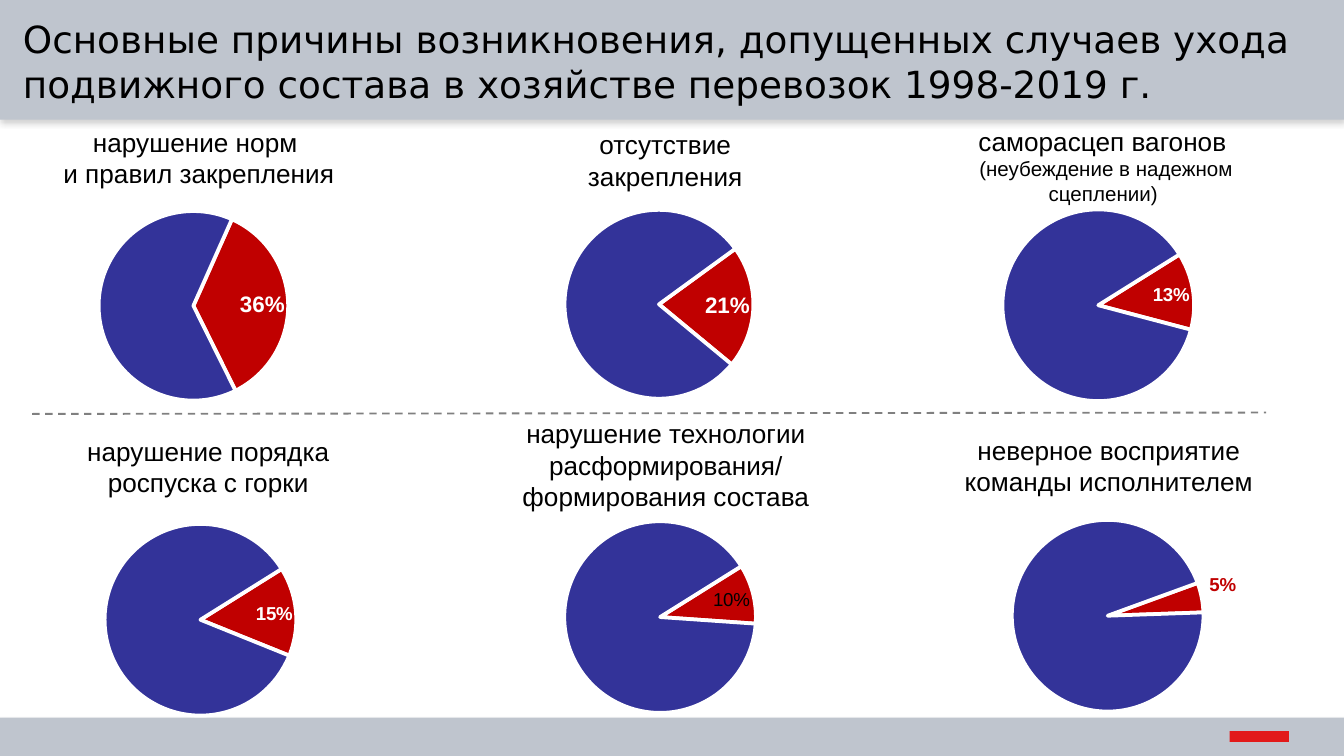
from dataclasses import dataclass

from lxml import etree
from pptx import Presentation
from pptx.chart.data import CategoryChartData
from pptx.dml.color import RGBColor
from pptx.enum import chart as charts, dml, shapes, text
from pptx.oxml import parse_xml
from pptx.oxml.ns import nsdecls, qn
from pptx.util import Inches, Pt

COLORS = {
    "band": "BFC5CE",
    "emblem": "E21A1A",
    "ink": "000000",
    "paper": "FFFFFF",
    "share": "C00000",
    "rest": "333399",
    "divider": "808080",
}
Box = tuple[float, float, float, float]
BEST_FIT = charts.XL_LABEL_POSITION.BEST_FIT
OUTSIDE = charts.XL_LABEL_POSITION.OUTSIDE_END
PLOT: Box = (0.135, 0.048, 0.717, 0.895)


@dataclass(frozen=True)
class Line:
    content: str
    size: int = 14
    new_paragraph: bool = False


@dataclass(frozen=True)
class Cause:
    lines: tuple[Line, ...]
    caption_box: Box
    chart_box: Box
    share: float
    start: int = 58
    plot: Box = PLOT
    label_size: int = 10
    label_color: str = "paper"
    label_bold: bool = True
    label_position: charts.XL_LABEL_POSITION = BEST_FIT


CAUSES = (
    Cause((Line("нарушение норм "), Line("и правил закрепления")),
          (0.28, 0.89, 2.4, 0.57), (0.39, 1.27, 2.25, 1.85), 0.36,
          start=24, plot=(0.153, 0.143, 0.627, 0.802), label_size=12),
    Cause((Line("отсутствие закрепления"),),
          (4.12, 0.91, 1.66, 0.57), (3.64, 1.33, 2.57, 1.91), 0.21,
          start=54, plot=(0.218, 0.121, 0.547, 0.737), label_size=12),
    Cause((Line("саморасцеп вагонов "),
           Line("(неубеждение в надежном сцеплении) ", 11)),
          (6.79, 0.88, 2.88, 0.71), (7.19, 1.43, 1.99, 1.7), 0.13),
    Cause((Line("нарушение порядка роспуска с горки"),),
          (0.25, 3.19, 2.6, 0.57), (0.51, 3.77, 1.99, 1.7), 0.15),
    Cause((Line("нарушение технологии расформирования/"),
           Line("формирования состава", new_paragraph=True)),
          (3.57, 3.06, 2.77, 0.81), (3.93, 3.75, 1.99, 1.7), 0.1,
          label_color="ink", label_bold=False),
    Cause((Line("неверное восприятие команды исполнителем"),),
          (6.89, 3.18, 2.72, 0.57), (7.26, 3.74, 1.99, 1.7), 0.05,
          start=70, label_color="share", label_position=OUTSIDE),
)


def rgb(name: str) -> RGBColor:
    return RGBColor.from_string(COLORS[name])


def inches(box: Box) -> list[Inches]:
    return [Inches(length) for length in box]


def format_font(font, *, size: int, name: str = "Arial",
                color: str = "ink", bold: bool = False) -> None:
    font.name, font.size, font.bold = name, Pt(size), bold
    font.color.rgb = rgb(color)


def add_span(para, content: str, **style) -> None:
    span = para.add_run()
    span.text = content
    format_font(span.font, **style)


def add_block(page, box: Box, color: str):
    block = page.shapes.add_shape(shapes.MSO_SHAPE.RECTANGLE, *inches(box))
    block.shadow.inherit = False
    block.fill.solid()
    block.fill.fore_color.rgb = rgb(color)
    block.line.fill.background()
    return block


def add_band(page, box: Box) -> None:
    """Add a full-width band with a soft shadow below it."""
    band = add_block(page, box, "band")
    effects = band._element.spPr.find(qn("a:effectLst"))
    effects.append(parse_xml(
        f'<a:outerShdw {nsdecls("a")} blurRad="{Pt(3.1)}" dist="{Pt(1.8)}" '
        'dir="5400000" rotWithShape="0"><a:srgbClr val="808080">'
        '<a:alpha val="35000"/></a:srgbClr></a:outerShdw>'))


def place_title(page, content: str) -> None:
    title = page.shapes.title
    title.left, title.top, title.width, title.height = inches(
        (0.07, 0.07, 9.93, 0.77))
    frame = title.text_frame
    frame.word_wrap = True
    frame.auto_size = text.MSO_AUTO_SIZE.NONE
    frame.vertical_anchor = text.MSO_ANCHOR.TOP
    para = frame.paragraphs[0]
    para.alignment = text.PP_ALIGN.LEFT
    add_span(para, content, size=20, name="DejaVu Sans")
    # Bring the title in front of the band
    page.shapes._spTree.append(title._element)


def add_caption(page, cause: Cause) -> None:
    box = page.shapes.add_textbox(*inches(cause.caption_box))
    box.text_frame.word_wrap = True
    para = box.text_frame.paragraphs[0]
    for index, line in enumerate(cause.lines):
        if line.new_paragraph:
            para = box.text_frame.add_paragraph()
        elif index:
            para.add_line_break()
        para.alignment = text.PP_ALIGN.CENTER
        add_span(para, line.content, size=line.size)


def set_plot_layout(chart, plot: Box) -> None:
    """Fix the inner plot area, given in fractions of the chart."""
    area = chart._chartSpace.find(".//" + qn("c:plotArea"))
    for old in area.findall(qn("c:layout")):
        area.remove(old)
    layout = etree.Element(qn("c:layout"))
    manual = etree.SubElement(layout, qn("c:manualLayout"))
    settings = [("layoutTarget", "inner"), ("xMode", "edge"), ("yMode", "edge"),
                *zip("xywh", plot)]
    for tag, value in settings:
        etree.SubElement(manual, qn(f"c:{tag}"), val=str(value))
    area.insert(0, layout)


def set_start_angle(chart, angle: int) -> None:
    pie = chart._chartSpace.find(".//" + qn("c:pieChart"))
    for old in pie.findall(qn("c:firstSliceAng")):
        pie.remove(old)
    etree.SubElement(pie, qn("c:firstSliceAng"), val=str(angle))


def add_pie(page, cause: Cause) -> None:
    data = CategoryChartData(number_format="0%")
    data.categories = ["1", "2"]
    data.add_series("Series 1", (cause.share, round(1 - cause.share, 2)))
    chart = page.shapes.add_chart(
        charts.XL_CHART_TYPE.PIE, *inches(cause.chart_box), data).chart
    chart.has_legend = chart.has_title = False
    format_font(chart.font, size=18)
    chart._chartSpace.find(qn("c:chart")).addnext(parse_xml(
        f'<c:spPr {nsdecls("c", "a")}><a:noFill/>'
        '<a:ln><a:noFill/></a:ln></c:spPr>'))
    set_plot_layout(chart, cause.plot)
    set_start_angle(chart, cause.start)
    chart.plots[0].vary_by_categories = True

    series = chart.plots[0].series[0]
    for index, color in enumerate(("share", "rest")):
        look = series.points[index].format
        look.fill.solid()
        look.fill.fore_color.rgb = rgb(color)
        look.line.color.rgb = rgb("paper")
        look.line.width = Pt(2)
    series.data_labels.show_value = False
    label = series.points[0].data_label
    format_font(label.font, size=cause.label_size, color=cause.label_color,
                bold=cause.label_bold)
    label.position = cause.label_position


def add_divider(page) -> None:
    divider = page.shapes.add_connector(
        shapes.MSO_CONNECTOR.STRAIGHT, *inches((0.24, 3.08, 9.42, 3.07)))
    divider.line.color.rgb = rgb("divider")
    divider.line.width = Pt(1)
    divider.line.dash_style = dml.MSO_LINE.DASH
    etree.SubElement(divider._element.spPr, qn("a:effectLst"))


def main() -> None:
    deck = Presentation()
    deck.slide_width, deck.slide_height = Inches(10), Inches(10 * 9 / 16)
    page = deck.slides.add_slide(deck.slide_layouts[5])
    add_band(page, (0, 0, 10, 0.89))
    add_band(page, (0, 5.34, 10, 0.29))
    add_block(page, (9.15, 5.44, 0.44, 0.08), "emblem")
    place_title(page, "Основные причины возникновения, допущенных случаев ухода "
                      "подвижного состава в хозяйстве перевозок 1998-2019 г.")
    for cause in CAUSES:
        add_caption(page, cause)
        add_pie(page, cause)
    add_divider(page)
    deck.save("out.pptx")


if __name__ == "__main__":
    main()
